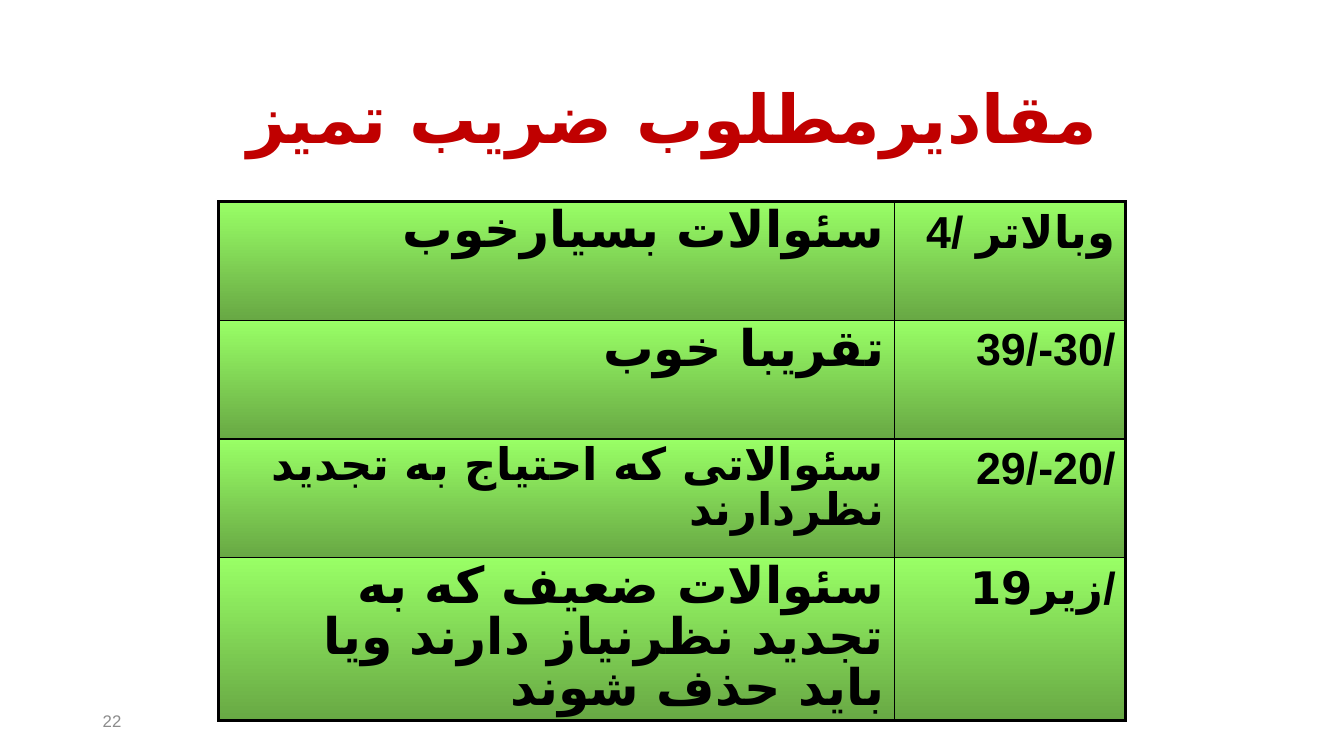
from pptx import Presentation
from pptx.dml.color import RGBColor
from pptx.enum.text import MSO_ANCHOR as Anchor, PP_ALIGN as Align
from pptx.oxml.ns import qn
from pptx.util import Cm, Pt
from lxml.etree import SubElement

COLORS = {
    "title": "C00000",
    "text": "000000",
    "number": "8C8C8C",
    "top": "99FF66",
    "bottom": "68A844",
}
PERSIAN_FONT = "DejaVu Sans"
THIN, THICK = 1, 2.25
ROWS = [
    ("سئوالات بسیارخوب", 36, "4/ وبالاتر"),
    ("تقریبا خوب", 36, "39/-30/"),
    ("سئوالاتی که احتیاج به تجدید نظردارند", 32, "29/-20/"),
    ("سئوالات ضعیف که به تجدید نظرنیاز دارند ویا باید حذف شوند", 36, "زیر19/"),
]
COLUMN_WIDTHS = [Cm(17.03), Cm(5.83)]
ROW_HEIGHTS = [Cm(2.99)] * 3 + [Cm(4.06)]


def write_text(frame, text, color, align, line_spacing=1.0, **font):
    paragraph = frame.paragraphs[0]
    for name, value in {"alignment": align, "line_spacing": line_spacing}.items():
        setattr(paragraph, name, value)
    run = paragraph.add_run()
    run.text = text
    for name, value in font.items():
        setattr(run.font, name, value)
    run.font.color.rgb = RGBColor.from_string(COLORS[color])
    run.font._element.set("lang", "fa-IR")
    SubElement(run.font._element, qn("a:cs"), typeface=PERSIAN_FONT)
    return paragraph


def add_title(slide, text):
    title = slide.shapes.title
    box = {"left": Cm(1.7), "top": Cm(1.47), "width": Cm(30.48), "height": Cm(3.18)}
    for name, value in box.items():
        setattr(title, name, value)
    title.text_frame.vertical_anchor = Anchor.MIDDLE
    paragraph = write_text(title.text_frame, text, "title", Align.CENTER, 0.9,
                           name="Calibri", size=Pt(48), bold=True)
    paragraph._p.get_or_add_pPr().set("rtl", "1")


def add_number(slide, text):
    frame = slide.shapes.add_textbox(Cm(2.34), Cm(17.65), Cm(7.62), Cm(1.02)).text_frame
    frame.word_wrap = True
    frame.vertical_anchor = Anchor.MIDDLE
    write_text(frame, text, "number", Align.LEFT, name="Arial", size=Pt(12))


def set_borders(cell, widths):
    properties = cell._tc.get_or_add_tcPr()
    for position, (side, width) in enumerate(widths.items()):
        line = SubElement(properties, qn(f"a:ln{side}"), w=str(Pt(width)))
        fill = SubElement(line, qn("a:solidFill"))
        SubElement(fill, qn("a:srgbClr"), val=COLORS["text"])
        properties.insert(position, line)


def fill_cell(cell, text, size, line_spacing):
    cell.fill.gradient()
    cell.fill.gradient_angle = 270
    for stop, color in zip(cell.fill.gradient_stops, ("top", "bottom")):
        stop.color.rgb = RGBColor.from_string(COLORS[color])
    paragraph = write_text(cell.text_frame, text, "text", Align.RIGHT, line_spacing,
                           name="Arial", size=Pt(size), bold=True)
    paragraph.space_before = Pt(size * 0.2)


def add_ratings(slide):
    table = slide.shapes.add_table(
        len(ROWS), 2, Cm(5.51), Cm(5.08), sum(COLUMN_WIDTHS), sum(ROW_HEIGHTS)
    ).table
    table.first_row = table.horz_banding = False
    for column, width in zip(table.columns, COLUMN_WIDTHS):
        column.width = width
    for index, (rating, size, values) in enumerate(ROWS):
        table.rows[index].height = ROW_HEIGHTS[index]
        contents = [(rating, size, 0.87), (values, 32, 1.0)]
        for column, content in enumerate(contents):
            cell = table.cell(index, column)
            fill_cell(cell, *content)
            set_borders(cell, {
                "L": THICK if column == 0 else THIN,
                "R": THICK if column == 1 else THIN,
                "T": THICK if index == 0 else THIN,
                "B": THICK if index == len(ROWS) - 1 else THIN,
            })


def main():
    presentation = Presentation()
    presentation.slide_width = Cm(33.87)
    presentation.slide_height = Cm(19.05)
    slide = presentation.slides.add_slide(presentation.slide_layouts[5])
    add_title(slide, "مقادیرمطلوب ضریب تمیز")
    add_ratings(slide)
    add_number(slide, "22")
    presentation.save("out.pptx")


if __name__ == "__main__":
    main()
